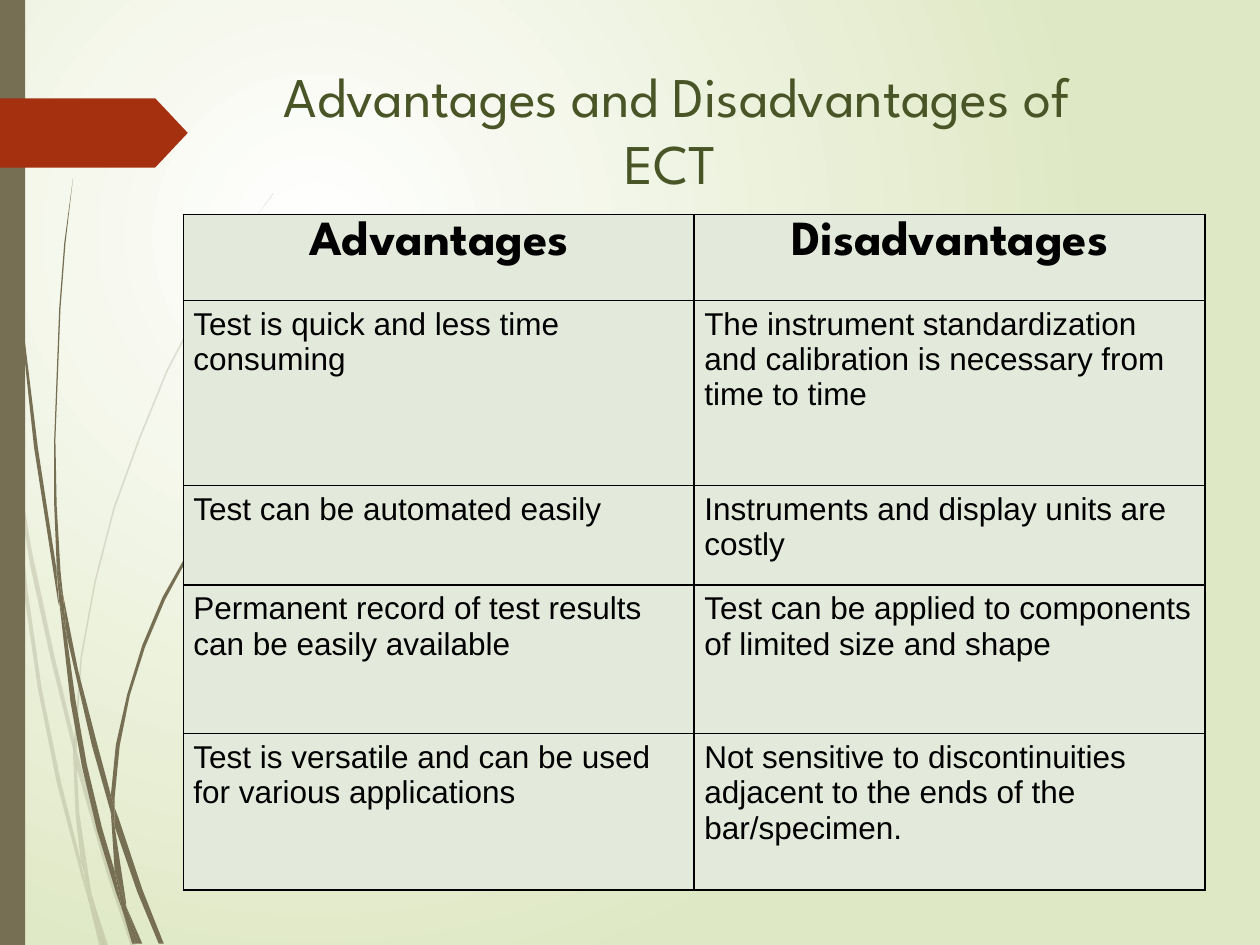
"""Build a slide that sets the advantages of ECT against its disadvantages."""
from lxml import etree
from pptx import Presentation
from pptx.dml.color import RGBColor
from pptx.enum.shapes import MSO_SHAPE
from pptx.enum.text import MSO_ANCHOR, MSO_AUTO_SIZE, PP_ALIGN
from pptx.oxml.ns import qn
from pptx.util import Inches, Pt

RECTANGLE, ARROW_TAG = MSO_SHAPE.RECTANGLE, MSO_SHAPE.PENTAGON
TOP, NO_FIT = MSO_ANCHOR.TOP, MSO_AUTO_SIZE.NONE
CENTER, LEFT = PP_ALIGN.CENTER, PP_ALIGN.LEFT

COLORS = {"glow": "FFFFFF", "meadow": "DFE8C4", "stem": "766F54", "tag": "A53010",
          "title": "495526", "cell": "E3E9DB", "ink": "000000"}
HEADING_FONT, BODY_FONT = "League Spartan", "Arial"

# Each blade of grass is an outline of (column, row) corners.
FAINT_BLADES = [
    [(0.8, 35), (0.6, 32.2), (0, 28.2), (0, 29.9), (0.7, 34.4)],
    [(4, 52.2), (5.9, 59.9), (5.9, 58.6), (4.3, 52), (2.5, 43.6), (1, 34.5), (1.2, 37.6),
     (2.4, 44.9)],
    [(6.4, 60.7), (6.1, 59.6), (6.1, 61), (8.5, 69.4), (10.4, 75.1), (10.8, 75.1), (8.8, 69.2)],
    [(8.3, 75.1), (8.6, 75.1), (7.3, 71.1)],
    [(6.4, 68.3), (4.8, 61.9), (3.3, 54.6), (2.2, 46.9), (1.2, 37.6), (0.8, 35), (1.2, 41),
     (1.9, 47), (3, 54.6), (4.5, 62.1), (6.4, 69.3), (7, 71.4), (6.9, 70.7)],
    [(5.8, 59.9), (6, 64.6), (6.4, 68.3), (6.7, 69.2), (7.3, 71.1), (7.2, 70.6), (6.3, 64.6),
     (6.1, 61), (6.1, 60.8)],
    [(6.1, 58.4), (6.5, 52.2), (7.6, 46.2), (9.1, 40.4), (11.1, 34.9), (13.3, 29.5),
     (15.9, 24.5), (18.7, 19.8), (20.1, 17.5), (21.7, 15.4), (21.7, 15.3), (20.1, 17.5),
     (18.6, 19.7), (15.8, 24.4), (13.2, 29.4), (11, 34.8), (9, 40.3), (7.5, 46.1),
     (6.4, 52.1), (5.9, 58.4), (5.9, 58.6), (6.1, 59.6)],
    [(7, 71.4), (7.9, 75.1), (8.2, 75.1)],
    [(6.1, 60.8), (6.1, 61), (6.1, 59.6), (5.9, 58.6), (5.8, 59.9)],
    [(6.7, 69.2), (6.5, 68.3), (6.9, 70.7), (7, 71.4), (8.2, 75.1), (8.3, 75.1), (7.3, 71.1)],
]
STRONG_BLADES = [
    [(0.5, 11), (1.4, 23.3), (2.7, 35.5), (4.6, 47.7), (4.7, 48.1), (4.5, 45.7), (4.5, 45.3),
     (3, 35.5), (1.5, 23.2), (0.6, 10.9), (0.4, 4.8), (0.3, 0), (0.2, 0), (0.3, 4.8)],
    [(7.3, 59.2), (8.8, 64.5), (8.8, 63.1), (7.7, 59), (6.2, 53.2), (5, 47.2), (5.3, 50.5)],
    [(9.4, 64.9), (9.1, 64.1), (9.1, 65.6), (10.9, 70.8), (12.6, 74.9), (13, 74.9), (11.3, 70.6)],
    [(9.1, 69.1), (8.1, 65.7), (6.9, 60.7), (6, 55.6), (5.3, 50.5), (4.7, 47.7), (5.6, 55.7),
     (6.5, 60.8), (7.7, 65.9), (9.2, 70.8), (9.7, 72.2), (9.6, 71.7)],
    [(5, 47.2), (4.8, 45.3), (4.5, 40.1), (4.4, 34.9), (4.8, 24.5), (5.2, 19.3), (5.8, 14.1),
     (5.1, 19.3), (4.7, 24.5), (4.3, 34.9), (4.3, 40), (4.5, 44.9), (4.9, 47.2)],
    [(11, 74.9), (11.3, 74.9), (10, 71.9)],
    [(4.7, 47.7), (5.3, 50.5), (5, 47.2), (4.9, 47.2), (4.5, 44.9), (4.5, 45.3)],
    [(9.1, 63.3), (9.5, 59.2), (10.3, 55.2), (11.5, 51.4), (13.1, 47.6), (16.9, 40.6),
     (19.1, 37.4), (20.3, 35.9), (21.6, 34.4), (21.5, 34.4), (20.3, 35.8), (19.1, 37.3),
     (16.8, 40.5), (12.9, 47.4), (11.3, 51.2), (10.1, 55.1), (9.2, 59.1), (8.8, 63.1),
     (9.1, 64.1)],
    [(9.7, 72.2), (10.5, 74.9), (10.8, 74.9)],
    [(8.8, 64.5), (9.1, 69.1), (9.6, 70.6), (10, 71.9), (10, 71.6), (9.1, 65.6), (9, 65.1)],
    [(8.8, 64.5), (9, 65.1), (9.1, 65.6), (9.1, 64.1), (8.8, 63.1), (8.8, 63.3)],
    [(9.6, 70.6), (9.1, 69.1), (9.6, 71.7), (9.7, 72.2), (10.8, 74.9), (11, 74.9), (10, 71.9)],
]
COMPARISON = [
    ("Advantages", "Disadvantages"),
    ("Test is quick and less time consuming",
     "The instrument standardization and calibration is necessary from time to time"),
    ("Test can be automated easily", "Instruments and display units are costly"),
    ("Permanent record of test results can be easily available",
     "Test can be applied to components of limited size and shape"),
    ("Test is versatile and can be used for various applications",
     "Not sensitive to discontinuities adjacent to the ends of the bar/specimen."),
]
ROW_HEIGHTS = [6.8, 14.7, 7.9, 11.8, 12.4]


def paint(shape, color):
    """Give a shape a plain fill without outline or shadow."""
    shape.shadow.inherit = False
    shape.fill.solid()
    shape.fill.fore_color.rgb = RGBColor.from_string(COLORS[color])
    shape.line.fill.background()


prs = Presentation()
prs.slide_width, prs.slide_height = Inches(10), Inches(7.5)
UNIT = prs.slide_width // 100
slide = prs.slides.add_slide(prs.slide_layouts[5])
shapes = slide.shapes

backdrop = slide.background.fill
backdrop.gradient()
for stop, color in zip(backdrop.gradient_stops, ("glow", "meadow")):
    stop.color.rgb = RGBColor.from_string(COLORS[color])
gradient = next(slide._element.iter(qn("a:gradFill")))
gradient.remove(gradient.find(qn("a:lin")))
circle = etree.SubElement(gradient, qn("a:path"), {"path": "circle"})
etree.SubElement(circle, qn("a:fillToRect"),
                 {"l": "50000", "t": "50000", "r": "100000", "b": "100000"})

for blades, opacity in ((FAINT_BLADES, 20), (STRONG_BLADES, 100)):
    tuft = shapes.add_group_shape()
    for blade in blades:
        corners = [(round(x * UNIT), round(y * UNIT)) for x, y in blade]
        builder = tuft.shapes.build_freeform(*corners[0])
        builder.add_line_segments(corners[1:], close=True)
        grass = builder.convert_to_shape()
        paint(grass, "stem")
        if opacity < 100:
            tint = next(grass._element.spPr.iter(qn("a:srgbClr")))
            etree.SubElement(tint, qn("a:alpha"), {"val": str(opacity * 1000)})

sidebar = shapes.add_shape(RECTANGLE, 0, 0, 2 * UNIT, prs.slide_height)
paint(sidebar, "stem")
tag = shapes.add_shape(ARROW_TAG, 0, round(7.8 * UNIT), round(14.9 * UNIT), round(5.5 * UNIT))
tag.adjustments[0] = 0.47
paint(tag, "tag")

heading = shapes.title
heading.left, heading.top, heading.width, heading.height = (
    round(cells * UNIT) for cells in (17.7, 4.4, 72.1, 14))
heading.text_frame.auto_size = NO_FIT
heading.text_frame.word_wrap = True
heading.text_frame.vertical_anchor = TOP
heading_line = heading.text_frame.paragraphs[0]
heading_line.alignment = CENTER
heading_run = heading_line.add_run()
heading_run.text = "Advantages and Disadvantages of ECT "
heading_run.font.name, heading_run.font.size = HEADING_FONT, Pt(32)
heading_run.font.color.rgb = RGBColor.from_string(COLORS["title"])

table = shapes.add_table(len(COMPARISON), 2, round(14.55 * UNIT), round(17.04 * UNIT),
                         round(81.1 * UNIT), round(sum(ROW_HEIGHTS) * UNIT)).table
for row, height in zip(table.rows, ROW_HEIGHTS):
    row.height = round(height * UNIT)
for r, statements in enumerate(COMPARISON):
    is_header = r == 0
    for c, statement in enumerate(statements):
        cell = table.cell(r, c)
        cell.margin_left = cell.margin_right = Inches(0.08)
        cell.margin_top = cell.margin_bottom = Inches(0.05)
        cell.vertical_anchor = TOP
        line = cell.text_frame.paragraphs[0]
        line.alignment = CENTER if is_header else LEFT
        run = line.add_run()
        run.text = statement
        run.font.name = HEADING_FONT if is_header else BODY_FONT
        run.font.size = Pt(28 if is_header else 18)
        run.font.bold = is_header
        run.font.color.rgb = RGBColor.from_string(COLORS["ink"])
        properties = cell._tc.get_or_add_tcPr()
        for side in ("lnL", "lnR", "lnT", "lnB"):
            border = etree.SubElement(properties, qn(f"a:{side}"), {"w": str(Pt(1))})
            ink = etree.SubElement(border, qn("a:solidFill"))
            etree.SubElement(ink, qn("a:srgbClr"), {"val": COLORS["ink"]})
        cell.fill.solid()
        cell.fill.fore_color.rgb = RGBColor.from_string(COLORS["cell"])

prs.save("out.pptx")
